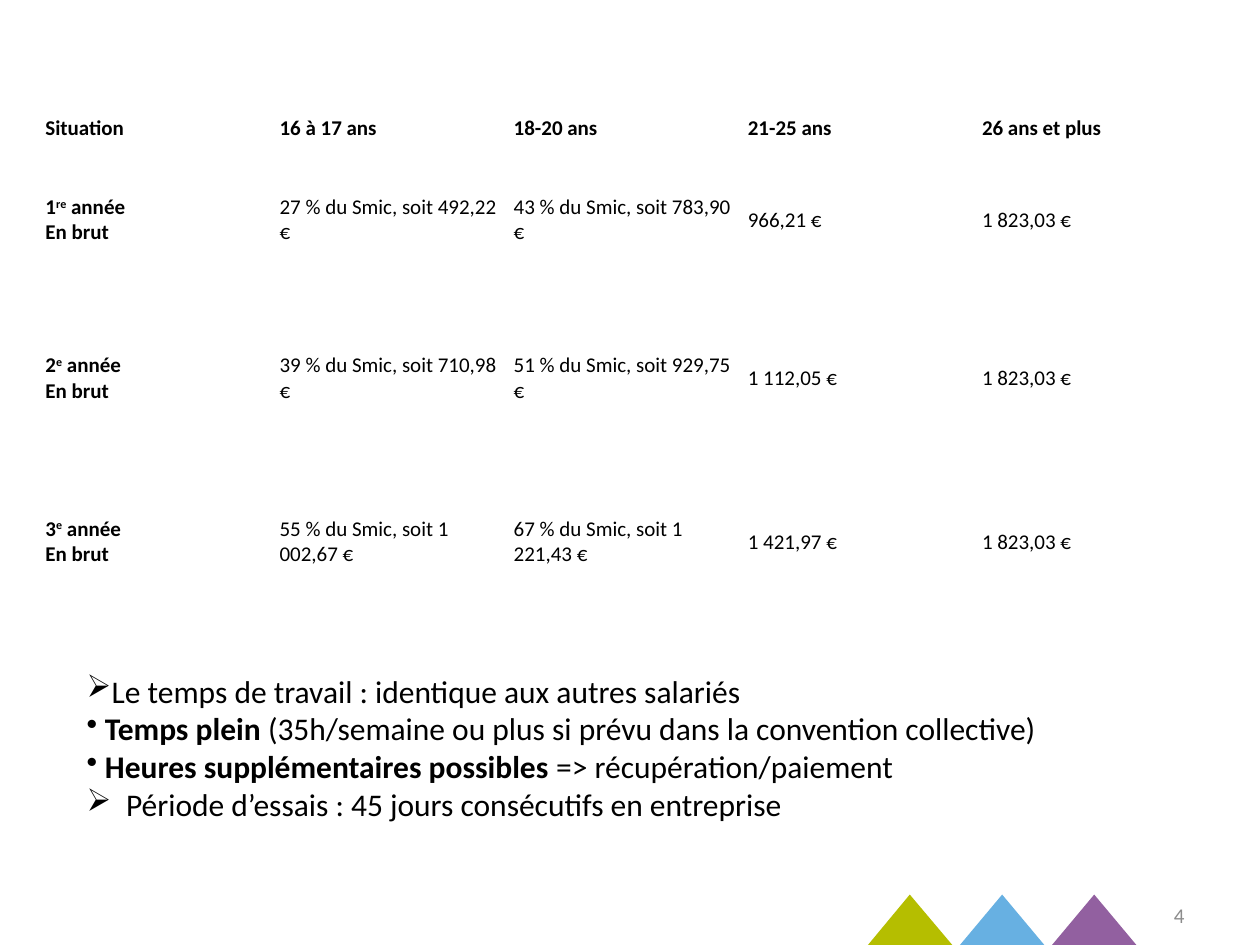
"""Build the slide on apprentice pay by age and year, with working-time notes."""
from lxml import etree
from pptx import Presentation
from pptx.dml.color import RGBColor
from pptx.enum.shapes import MSO_SHAPE
from pptx.enum.text import MSO_ANCHOR, PP_ALIGN
from pptx.oxml.ns import qn
from pptx.util import Pt

TRIANGLE = MSO_SHAPE.ISOSCELES_TRIANGLE
MIDDLE, RIGHT = MSO_ANCHOR.MIDDLE, PP_ALIGN.RIGHT
FONT = "Calibri"
COLORS = {"text": "000000", "number": "8C8C8C",
          "green": "B5BE00", "blue": "67B0E2", "purple": "9260A0"}

HEADERS = ["Situation", "16 à 17 ans", "18-20 ans", "21-25 ans", "26 ans et plus"]
YEARS = [
    ("1", "re", ["27 % du Smic, soit 492,22 €", "43 % du Smic, soit 783,90 €",
                 "966,21 €", "1 823,03 €"]),
    ("2", "e", ["39 % du Smic, soit 710,98 €", "51 % du Smic, soit 929,75 €",
                "1 112,05 €", "1 823,03 €"]),
    ("3", "e", ["55 % du Smic, soit 1 002,67 €", "67 % du Smic, soit 1 221,43 €",
                "1 421,97 €", "1 823,03 €"]),
]
NOTES = [
    ("➢", 0, "", "Le temps de travail : identique aux autres salariés"),
    ("•", 0, " Temps plein ", "(35h/semaine ou plus si prévu dans la convention collective)"),
    ("•", 0, " Heures supplémentaires possibles ", "=> récupération/paiement"),
    ("➢", 22.5, "", "Période d’essais : 45 jours consécutifs en entreprise"),
]
ROW_HEIGHTS = [8, 87.1, 93.6, 93.6]
COL_WIDTH = 133.8
CELL_FORMAT = {"vertical_anchor": MIDDLE, "margin_left": Pt(3), "margin_right": Pt(3),
               "margin_top": Pt(1.5), "margin_bottom": Pt(1.5)}
TRIANGLES = [("green", 0.496), ("blue", 0.5), ("purple", 0.5)]


def box(left, top, width, height):
    return [Pt(v) for v in (left, top, width, height)]


def add_run(p, text, size, bold=False, color="text", raised=False):
    r = p.add_run()
    r.text = text
    for name, value in {"name": FONT, "size": Pt(size), "bold": bold}.items():
        setattr(r.font, name, value)
    r.font.color.rgb = RGBColor.from_string(COLORS[color])
    if raised:
        r.font._element.set("baseline", "30000")


def add_bullet(p, char, indent):
    pPr = p._p.get_or_add_pPr()
    pPr.set("marL", str(Pt(indent)))
    pPr.set("indent", str(-Pt(indent)))
    etree.SubElement(pPr, qn("a:buChar")).set("char", char)


def add_pay_table(s):
    shape = s.shapes.add_table(len(YEARS) + 1, len(HEADERS),
                               *box(23, 64.8, COL_WIDTH * len(HEADERS), sum(ROW_HEIGHTS)))
    table = shape.table
    table.first_row = table.horz_banding = False
    for col in table.columns:
        col.width = Pt(COL_WIDTH)
    for row, height in zip(table.rows, ROW_HEIGHTS):
        row.height = Pt(height)
    for cell in table.iter_cells():
        cell.fill.background()
        for name, value in CELL_FORMAT.items():
            setattr(cell, name, value)
    for c, header in enumerate(HEADERS):
        add_run(table.cell(0, c).text_frame.paragraphs[0], header, 12, True)
    for i, (number, suffix, amounts) in enumerate(YEARS, 1):
        tf = table.cell(i, 0).text_frame
        p = tf.paragraphs[0]
        add_run(p, number, 12, True)
        add_run(p, suffix, 12, True, raised=True)
        add_run(p, " année", 12, True)
        add_run(tf.add_paragraph(), "En brut", 12, True)
        for c, amount in enumerate(amounts, 1):
            add_run(table.cell(i, c).text_frame.paragraphs[0], amount, 12)


def add_notes(s):
    tf = s.shapes.add_textbox(*box(42.5, 380.2, 652.3, 94.3)).text_frame
    tf.word_wrap = True
    for i, (char, indent, strong, text) in enumerate(NOTES):
        p = tf.add_paragraph() if i else tf.paragraphs[0]
        add_bullet(p, char, indent)
        if strong:
            add_run(p, strong, 18, True)
        add_run(p, text, 18)


def add_footer(s):
    for i, (color, apex) in enumerate(TRIANGLES):
        sp = s.shapes.add_shape(TRIANGLE, *box(496 + 52.6 * i, 511.2, 48.2, 28.8))
        sp.adjustments[0] = apex
        sp.shadow.inherit = False
        sp.fill.solid()
        sp.fill.fore_color.rgb = RGBColor.from_string(COLORS[color])
        sp.line.fill.background()
    tf = s.shapes.add_textbox(*box(649.4, 508.3, 34.6, 28.8)).text_frame
    tf.word_wrap = True
    tf.vertical_anchor = MIDDLE
    p = tf.paragraphs[0]
    p.alignment = RIGHT
    add_run(p, "4", 12, color="number")


def main():
    prs = Presentation()
    prs.slide_width, prs.slide_height = Pt(720), Pt(540)
    s = prs.slides.add_slide(prs.slide_layouts[6])
    add_footer(s)
    add_notes(s)
    add_pay_table(s)
    prs.save("out.pptx")


if __name__ == "__main__":
    main()
